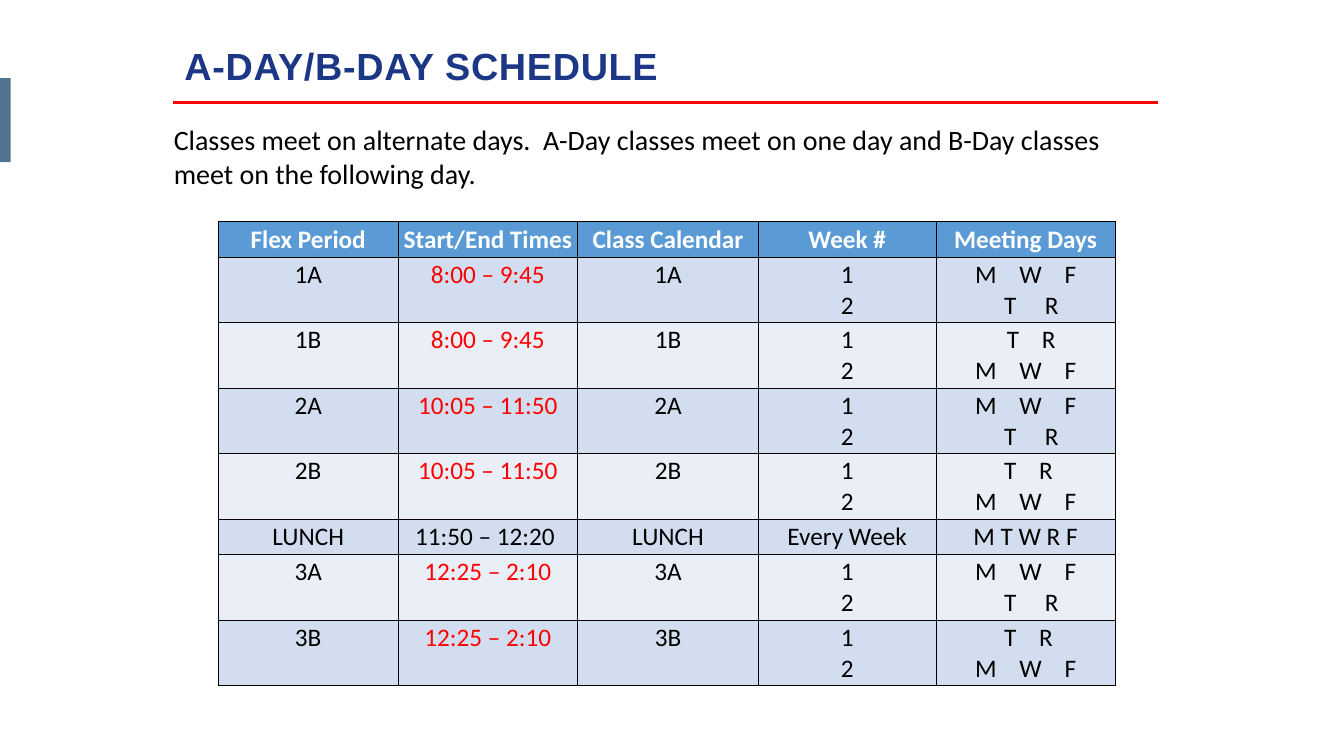
from lxml.etree import SubElement
from pptx import Presentation
from pptx.dml.color import RGBColor
from pptx.enum.shapes import MSO_CONNECTOR, MSO_SHAPE
from pptx.enum.text import PP_ALIGN
from pptx.oxml.ns import qn
from pptx.util import Pt

TITLE = "A-DAY/B-DAY SCHEDULE"
INTRO = ("Classes meet on alternate days.  A-Day classes meet on one day "
         "and B-Day classes meet on the following day.")
HEADERS = ["Flex Period", "Start/End Times", "Class Calendar", "Week #", "Meeting Days"]
WEEKS = "1\n2"
MWF = "M    W    F"
A_DAYS = MWF + "\n  T     R"
B_DAYS = " T    R\n" + MWF
# Flex period (also the class calendar), times, weeks, meeting days
PERIODS = [
    ("1A", "8:00 – 9:45", WEEKS, A_DAYS),
    ("1B", "8:00 – 9:45", WEEKS, " " + B_DAYS),
    ("2A", "10:05 – 11:50", WEEKS, A_DAYS),
    ("2B", "10:05 – 11:50", WEEKS, B_DAYS),
    ("LUNCH", "11:50 – 12:20 ", "Every Week", "M T W R F"),
    ("3A", "12:25 – 2:10", WEEKS, A_DAYS),
    ("3B", "12:25 – 2:10", WEEKS, B_DAYS),
]

THEME = {
    "navy": "1D3787", "red": "FF0000", "black": "000000", "white": "FFFFFF",
    "steel": "507392", "header": "5B9BD5", "bands": ("D2DEEF", "EAEFF7"),
    "title_font": "Arial", "body_font": "Calibri",
    "title_size": 54, "intro_size": 40, "table_size": 36,
}
COLUMN_WIDTHS = [257, 256.3, 258.5, 253.4, 256.3]
SINGLE_ROW, DOUBLE_ROW = 50.4, 93.6
CELL_MARGIN = 3.2


def colour(name):
    return RGBColor.from_string(THEME.get(name, name))


def write(frame, text, size, font="body_font", fill="black", bold=False,
          align=PP_ALIGN.LEFT, after=0, spacing=0):
    """Fill a text frame, one paragraph to each line of text."""
    frame.word_wrap = True
    for index, line in enumerate(text.split("\n")):
        para = frame.add_paragraph() if index else frame.paragraphs[0]
        para.alignment = align
        para.space_after = Pt(after)
        span = para.add_run()
        span.text = line
        span.font.name = THEME[font]
        span.font.size = Pt(THEME[size])
        span.font.bold = bold
        span.font.color.rgb = colour(fill)
        if spacing:
            span.font._element.set("spc", str(spacing * 100))


def add_text(page, left, top, width, height, text, **style):
    box = page.shapes.add_textbox(Pt(left), Pt(top), Pt(width), Pt(height))
    write(box.text_frame, text, **style)


def add_borders(cell):
    properties = cell._tc.get_or_add_tcPr()
    for side in ("a:lnL", "a:lnR", "a:lnT", "a:lnB"):
        line = SubElement(properties, qn(side), w=str(Pt(1)))
        fill = SubElement(line, qn("a:solidFill"))
        SubElement(fill, qn("a:srgbClr"), val=THEME["black"])


def format_cell(cell, text, background, **style):
    add_borders(cell)
    cell.fill.solid()
    cell.fill.fore_color.rgb = colour(background)
    cell.margin_top = cell.margin_bottom = Pt(CELL_MARGIN)
    write(cell.text_frame, text, "table_size", align=PP_ALIGN.CENTER, **style)


def add_schedule(page, left, top):
    rows = [HEADERS] + [(period, times, period, weeks, days)
                        for period, times, weeks, days in PERIODS]
    heights = [DOUBLE_ROW if "\n" in row[-1] else SINGLE_ROW for row in rows]
    table = page.shapes.add_table(len(rows), len(HEADERS), Pt(left), Pt(top),
                                  Pt(sum(COLUMN_WIDTHS)), Pt(sum(heights))).table
    for column, width in zip(table.columns, COLUMN_WIDTHS):
        column.width = Pt(width)
    for r, (row, height) in enumerate(zip(rows, heights)):
        table.rows[r].height = Pt(height)
        for c, text in enumerate(row):
            cell = table.cell(r, c)
            if r == 0:
                format_cell(cell, text, "header", fill="white", bold=True)
            else:
                is_class_time = c == 1 and row[0] != "LUNCH"
                format_cell(cell, text, THEME["bands"][(r - 1) % 2],
                            fill="red" if is_class_time else "black")


def main():
    deck = Presentation()
    deck.slide_width, deck.slide_height = Pt(1920), Pt(1080)
    page = deck.slides.add_slide(deck.slide_layouts[6])

    rule = page.shapes.add_connector(MSO_CONNECTOR.STRAIGHT, Pt(247.7), Pt(146.9),
                                     Pt(1654.6), Pt(146.9))
    rule.line.color.rgb = colour("red")
    rule.line.width = Pt(4)
    SubElement(rule._element.spPr, qn("a:effectLst"))

    add_text(page, 241.2, 172, 1425, 104.4, INTRO, size="intro_size", after=12)

    tab = page.shapes.add_shape(MSO_SHAPE.RECTANGLE, 0, Pt(111.6), Pt(15.1), Pt(120.2))
    tab.shadow.inherit = False
    tab.fill.solid()
    tab.fill.fore_color.rgb = colour("steel")
    tab.line.fill.background()

    add_text(page, 256.3, 57.6, 938, 72.7, TITLE, size="title_size",
             font="title_font", fill="navy", bold=True, spacing=1)
    add_schedule(page, 311.8, 316.8)
    deck.save("out.pptx")


if __name__ == "__main__":
    main()
